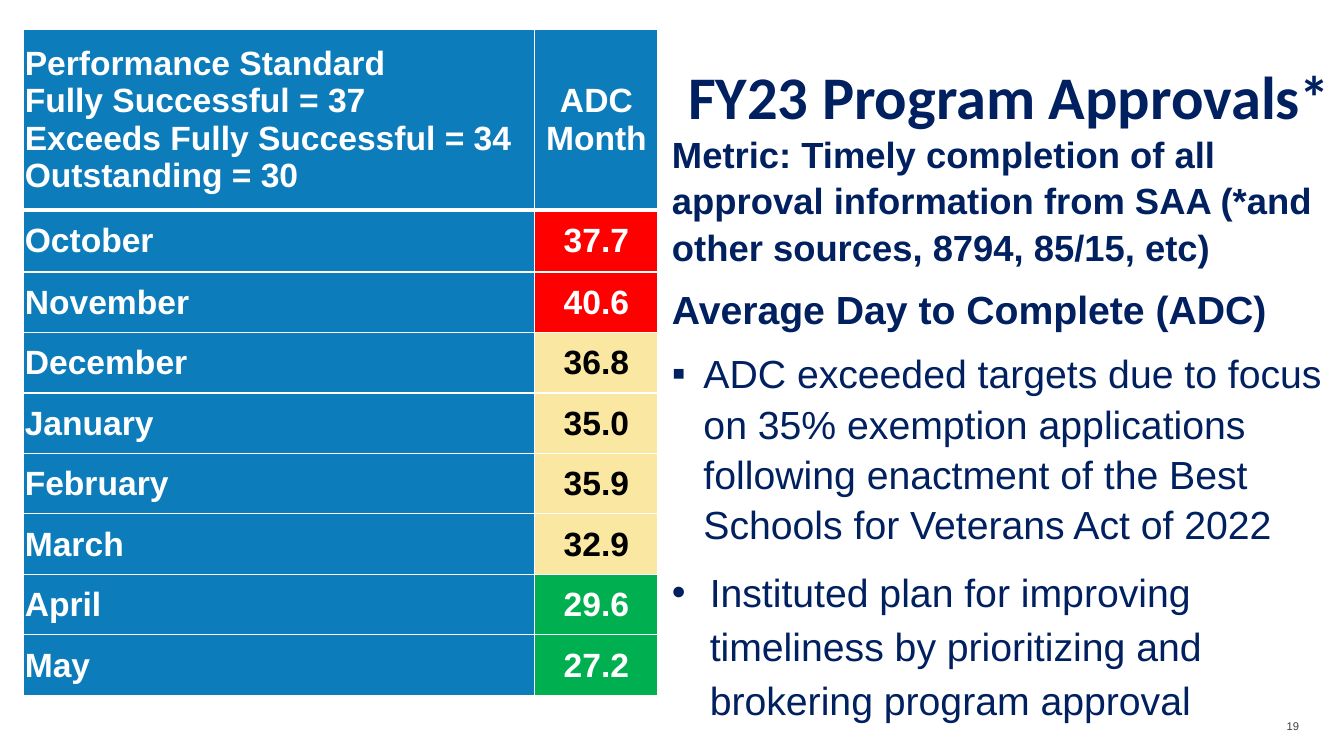
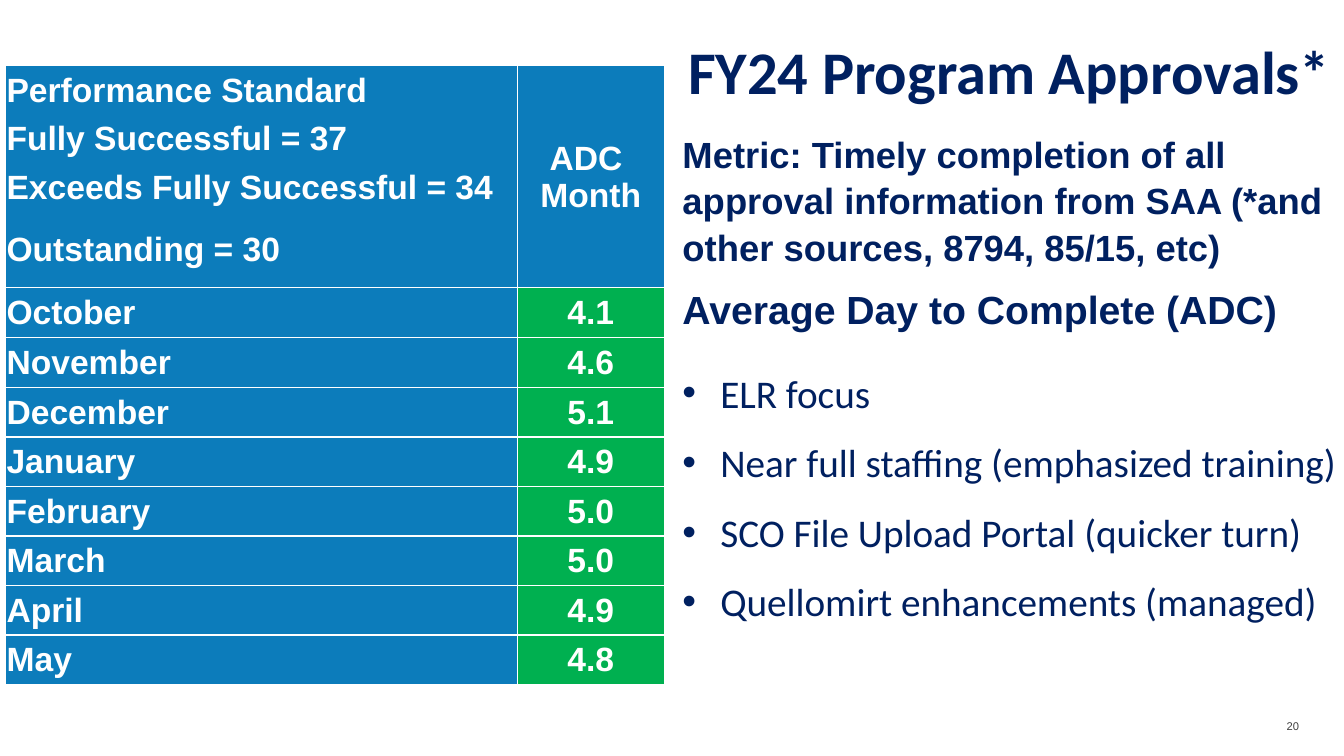
from dataclasses import dataclass

from lxml import etree
from pptx import Presentation
from pptx.dml.color import RGBColor
from pptx.enum.text import MSO_ANCHOR, MSO_AUTO_SIZE, PP_ALIGN
from pptx.oxml.ns import qn
from pptx.util import Pt

LEFT, CENTER, RIGHT = PP_ALIGN.LEFT, PP_ALIGN.CENTER, PP_ALIGN.RIGHT
TOP, MIDDLE = MSO_ANCHOR.TOP, MSO_ANCHOR.MIDDLE
NO_FIT = MSO_AUTO_SIZE.NONE
TITLE_ONLY = 5


@dataclass(frozen=True)
class Theme:
    navy: str = "002060"
    blue: str = "0C7CBB"
    white: str = "FFFFFF"
    black: str = "000000"
    gray: str = "404040"
    red: str = "FF0000"
    yellow: str = "FAE7A2"
    green: str = "00B050"
    body_font: str = "Arial"
    title_font: str = "Calibri"
    title_size: float = 43.2
    large_size: float = 28
    metric_size: float = 26
    table_size: float = 24
    number_size: float = 8
    body_spacing: float = 1.07
    body_gap: float = 9.6


THEME = Theme()
MONTHS = ["October", "November", "December", "January",
          "February", "March", "April", "May"]
STANDARD = ["Performance Standard", "Fully Successful = 37",
            "Exceeds Fully Successful = 34", "Outstanding = 30"]
METRIC = ("Metric: Timely completion of all approval information from SAA "
          "(*and other sources, 8794, 85/15, etc)")
FULLY_SUCCESSFUL, OUTSTANDING = 37, 30


def rgb(color):
    return RGBColor.from_string(color)


def write(frame, text, size=THEME.large_size, color=THEME.navy,
          font=THEME.body_font, bold=False, align=LEFT, spacing=1.0,
          before=0, bullet=None, indent=0):
    """Add one formatted paragraph, using the empty first one if it is free."""
    first = frame.paragraphs[0]
    paragraph = first if not first.runs else frame.add_paragraph()
    paragraph.alignment = align
    paragraph.line_spacing = spacing
    paragraph.space_before, paragraph.space_after = Pt(before), Pt(0)
    run = paragraph.add_run()
    run.text = text
    run.font.size, run.font.name, run.font.bold = Pt(size), font, bold
    run.font.color.rgb = rgb(color)
    if bullet:
        properties = paragraph._p.get_or_add_pPr()
        properties.set("marL", str(Pt(indent)))
        properties.set("indent", str(-Pt(indent)))
        etree.SubElement(properties, qn("a:buFont")).set("typeface", THEME.body_font)
        etree.SubElement(properties, qn("a:buChar")).set("char", bullet)


def prepare_frame(frame, anchor=TOP):
    frame.word_wrap = True
    frame.auto_size = NO_FIT
    frame.vertical_anchor = anchor
    frame.margin_left = frame.margin_right = 0
    frame.margin_top = frame.margin_bottom = 0


def add_frame(slide, box, anchor=TOP):
    frame = slide.shapes.add_textbox(*map(Pt, box)).text_frame
    prepare_frame(frame, anchor)
    return frame


def place_title(slide, box, text, spacing):
    title = slide.shapes.title
    title.left, title.top, title.width, title.height = map(Pt, box)
    title.fill.solid()
    title.fill.fore_color.rgb = rgb(THEME.white)
    prepare_frame(title.text_frame)
    write(title.text_frame, text, size=THEME.title_size, font=THEME.title_font,
          bold=True, align=CENTER, spacing=spacing)


def place_page_number(slide, number):
    frame = add_frame(slide, (898, 510.5, 30, 16.5), MIDDLE)
    write(frame, str(number), size=THEME.number_size, color=THEME.gray, align=RIGHT)


def place_summary(slide, box, points):
    """Metric, heading and bullet points; each point holds text and format."""
    frame = add_frame(slide, box)
    write(frame, METRIC, size=THEME.metric_size, bold=True,
          spacing=THEME.body_spacing)
    write(frame, "Average Day to Complete (ADC)", bold=True,
          spacing=THEME.body_spacing, before=THEME.body_gap)
    for text, style in points:
        write(frame, text, **style)


def set_borders(cell, top=1, bottom=1):
    """White borders; a width of 0 leaves the edge undrawn."""
    widths = {"a:lnL": 1, "a:lnR": 1, "a:lnT": top, "a:lnB": bottom}
    properties = cell._tc.get_or_add_tcPr()
    for position, (tag, width) in enumerate(widths.items()):
        line = etree.Element(qn(tag), w=str(Pt(width)))
        if width:
            fill = etree.SubElement(line, qn("a:solidFill"))
            etree.SubElement(fill, qn("a:srgbClr")).set("val", THEME.white)
        else:
            etree.SubElement(line, qn("a:noFill"))
        properties.insert(position, line)


def fill_cell(cell, text, fill=THEME.blue, color=THEME.white, align=LEFT,
              **borders):
    cell.fill.solid()
    cell.fill.fore_color.rgb = rgb(fill)
    cell.vertical_anchor = MIDDLE
    cell.margin_left = cell.margin_right = cell.margin_top = Pt(0.72)
    cell.margin_bottom = 0
    for line in text.split("\n"):
        write(cell.text_frame, line, size=THEME.table_size, color=color,
              bold=True, align=align)
    set_borders(cell, **borders)


def rating_colors(days):
    """Fill and text colour for an average, by the performance standard."""
    if days > FULLY_SUCCESSFUL:
        return THEME.red, THEME.white
    if days > OUTSTANDING:
        return THEME.yellow, THEME.black
    return THEME.green, THEME.white


def place_adc_table(slide, origin, widths, header, header_heights, adc_label,
                    rule, month_heights, averages):
    """Standard on top, then one row a month; rule is the header's bottom line."""
    heights = header_heights + month_heights
    box = (*origin, sum(widths), sum(heights))
    table = slide.shapes.add_table(len(heights), 2, *map(Pt, box)).table
    table.first_row = table.horz_banding = False
    for column, width in zip(table.columns, widths):
        column.width = Pt(width)
    for row, height in zip(table.rows, heights):
        row.height = Pt(height)

    # Header: the standard beside the column label
    last = len(header) - 1
    for index, text in enumerate(header):
        fill_cell(table.cell(index, 0), text, top=0 if index else 1,
                  bottom=rule if index == last else 0)
    if last:
        table.cell(0, 1).merge(table.cell(last, 1))
    fill_cell(table.cell(0, 1), adc_label, align=CENTER, bottom=rule)

    # Months and their rated averages
    for index, (month, days) in enumerate(zip(MONTHS, averages)):
        row = len(header) + index
        top = 1 if index else rule
        fill, color = rating_colors(days)
        fill_cell(table.cell(row, 0), month, top=top)
        fill_cell(table.cell(row, 1), f"{days:.1f}", fill, color, CENTER, top=top)


def add_approvals_slide(deck, number, title, title_box, title_spacing,
                        summary_box, points, table):
    slide = deck.slides.add_slide(deck.slide_layouts[TITLE_ONLY])
    place_page_number(slide, number)
    place_title(slide, title_box, title, title_spacing)
    place_summary(slide, summary_box, points)
    place_adc_table(slide, **table)


def main():
    deck = Presentation()
    deck.slide_width, deck.slide_height = Pt(960), Pt(540)

    add_approvals_slide(
        deck, 19, "FY23 Program Approvals*", (490, 29, 462, 60), 1.25,
        (480, 92, 472.5, 389),
        [("ADC exceeded targets due to focus on 35% exemption applications "
          "following enactment of the Best Schools for Veterans Act of 2022",
          dict(bullet="▪", indent=22.5, spacing=THEME.body_spacing,
               before=THEME.body_gap)),
         ("Instituted plan for improving timeliness by prioritizing and "
          "brokering program approval",
          dict(bullet="•", indent=27, spacing=1.15, before=THEME.body_gap))],
        dict(origin=(17, 21), widths=(365, 88), header=["\n".join(STANDARD)],
             header_heights=[128.8], adc_label="ADC Month", rule=3,
             month_heights=[44.5] + [43.2] * 7,
             averages=[37.7, 40.6, 36.8, 35.0, 35.9, 32.9, 29.6, 27.2]))

    focus_points = ["ELR focus", "Near full staffing (emphasized training)",
                    "SCO File Upload Portal (quicker turn)",
                    "Quellomirt enhancements (managed)"]
    add_approvals_slide(
        deck, 20, "FY24 Program Approvals*", (490, 24, 462, 68), 1.0,
        (487.5, 92, 472.5, 389),
        [(text, dict(font=THEME.title_font, bullet="•", indent=27, spacing=1.48,
                     before=0 if index else THEME.body_gap))
         for index, text in enumerate(focus_points)],
        dict(origin=(4, 47), widths=(365.5, 105), header=STANDARD,
             header_heights=[34.7] * 3 + [54], adc_label="ADC \nMonth", rule=1.5,
             month_heights=[36] + [35.4] * 7,
             averages=[4.1, 4.6, 5.1, 4.9, 5.0, 5.0, 4.9, 4.8]))

    deck.save("out.pptx")


if __name__ == "__main__":
    main()
